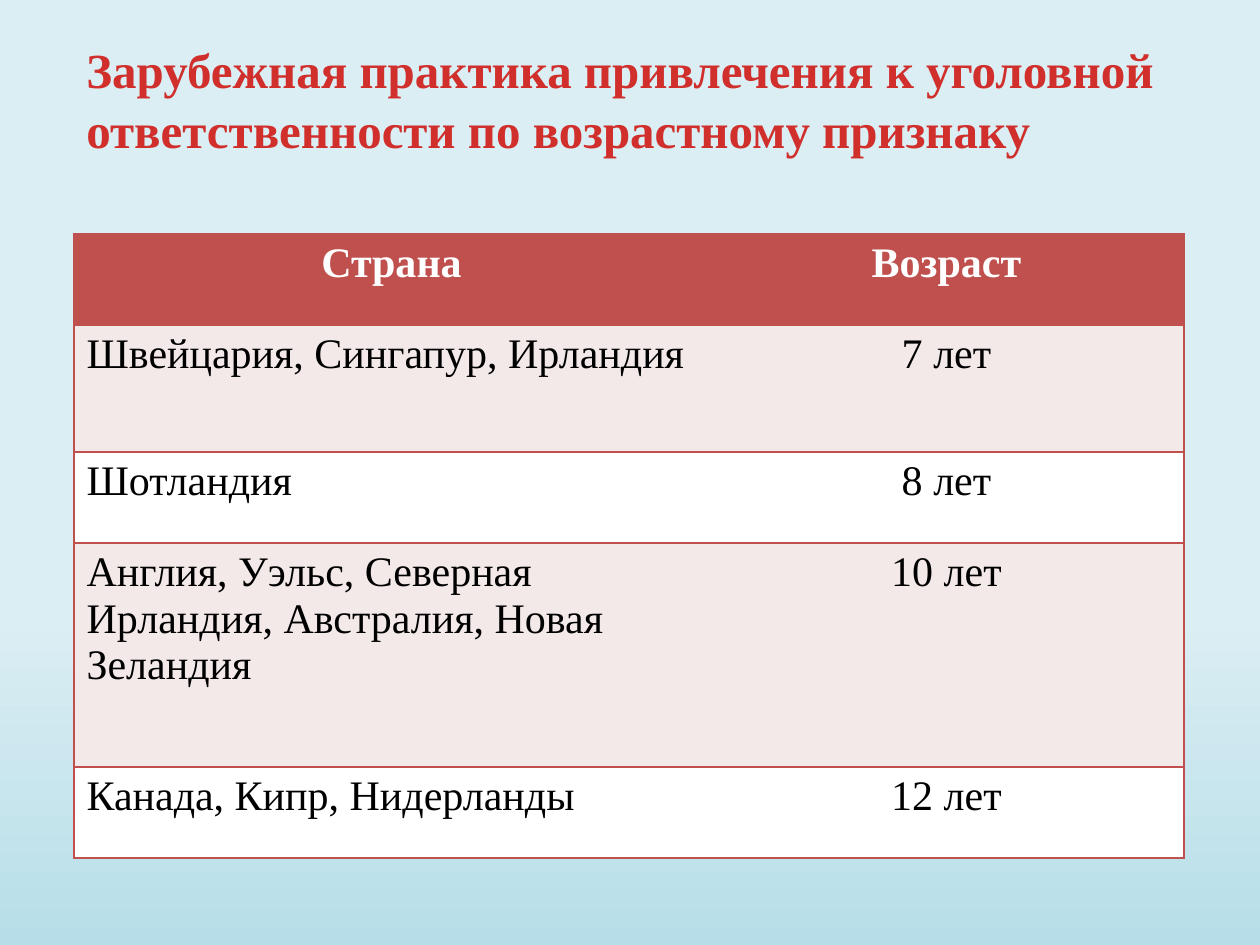
from dataclasses import dataclass

from lxml.etree import SubElement
from pptx import Presentation
from pptx.dml.color import RGBColor
from pptx.enum.text import PP_ALIGN
from pptx.oxml.ns import qn
from pptx.util import Pt


@dataclass(frozen=True)
class Theme:
    font: str = "Times New Roman"
    title_size: int = 28
    title_spacing: int = 34
    table_size: int = 24
    border_width: int = 1
    title: str = "D02F2C"
    header: str = "C0504D"
    header_text: str = "FFFFFF"
    text: str = "000000"
    bands: tuple = ("F4E9E9", "FFFFFF")
    background: tuple = ((0.65, "DBEEF4"), (1, "B7DEE8"))
    plain_table: str = "{2D5ABB26-0587-4C30-8999-92F81FD0307C}"


def px(length):
    return round(length * 914400 / 126)


class SlideBuilder:
    def __init__(self, theme, slide):
        self.theme = theme
        self.slide = slide

    def background(self):
        fill = self.slide.background.fill
        fill.gradient()
        fill.gradient_angle = 270
        for stop, (position, color) in zip(fill.gradient_stops, self.theme.background):
            stop.position = position
            stop.color.rgb = RGBColor.from_string(color)

    def add_span(self, para, text, size, color, bold):
        span = para.add_run()
        span.text = text
        formats = {"name": self.theme.font, "size": Pt(size), "bold": bold}
        for name, value in formats.items():
            setattr(span.font, name, value)
        span.font.color.rgb = RGBColor.from_string(color)

    def title(self, text, left, top, width, height):
        box = self.slide.shapes.add_textbox(px(left), px(top), px(width), px(height))
        box.text_frame.word_wrap = True
        para = box.text_frame.paragraphs[0]
        para.line_spacing = Pt(self.theme.title_spacing)
        self.add_span(para, text, self.theme.title_size, self.theme.title, True)

    def border(self, cell_element, sides):
        properties = cell_element.get_or_add_tcPr()
        for side in sides:
            line = SubElement(properties, qn(f"a:ln{side}"), w=str(Pt(self.theme.border_width)))
            fill = SubElement(line, qn("a:solidFill"))
            SubElement(fill, qn("a:srgbClr"), val=self.theme.header)

    def table(self, rows, left, top, widths, heights):
        frame = self.slide.shapes.add_table(
            len(rows), len(widths), px(left), px(top), px(sum(widths)), px(sum(heights))
        )
        next(frame.element.iter(qn("a:tableStyleId"))).text = self.theme.plain_table
        for column, width in zip(frame.table.columns, widths):
            column.width = px(width)
        for row, height in zip(frame.table.rows, heights):
            row.height = px(height)
        for cell_element, side in zip(frame.element.iter(qn("a:tc")), "LR" * len(rows)):
            self.border(cell_element, (side, "T", "B"))
        for row_index, texts in enumerate(rows):
            is_header = row_index == 0
            fill = self.theme.header if is_header else self.theme.bands[(row_index - 1) % 2]
            color = self.theme.header_text if is_header else self.theme.text
            for column_index, text in enumerate(texts):
                cell = frame.table.cell(row_index, column_index)
                cell.fill.solid()
                cell.fill.fore_color.rgb = RGBColor.from_string(fill)
                para = cell.text_frame.paragraphs[0]
                centered = is_header or column_index == 1
                para.alignment = PP_ALIGN.CENTER if centered else PP_ALIGN.LEFT
                self.add_span(para, text, self.theme.table_size, color, is_header)


def main():
    deck = Presentation()
    deck.slide_width, deck.slide_height = px(1260), px(945)
    page = SlideBuilder(Theme(), deck.slides.add_slide(deck.slide_layouts[6]))
    page.background()
    page.title(
        "Зарубежная практика привлечения к уголовной ответственности по возрастному признаку",
        74, 33, 1142, 131,
    )
    countries = [
        ("Страна", "Возраст"),
        ("Швейцария, Сингапур, Ирландия", "7 лет"),
        ("Шотландия", "8 лет"),
        ("Англия, Уэльс, Северная Ирландия, Австралия, Новая Зеландия", "10 лет"),
        ("Канада, Кипр, Нидерланды", "12 лет"),
    ]
    page.table(countries, 74, 234, (635, 475), (91, 127, 91, 224, 91))
    deck.save("out.pptx")


if __name__ == "__main__":
    main()
